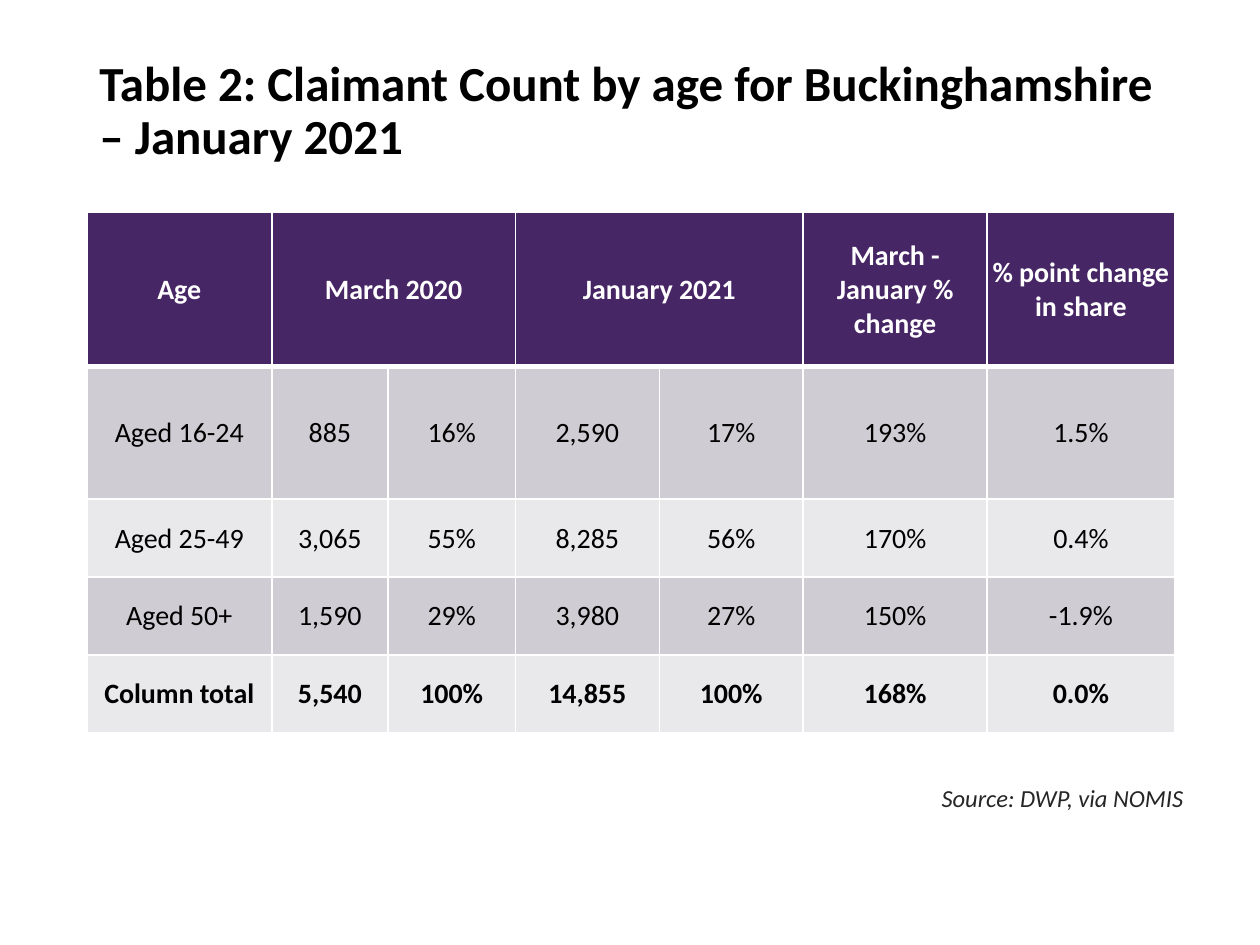
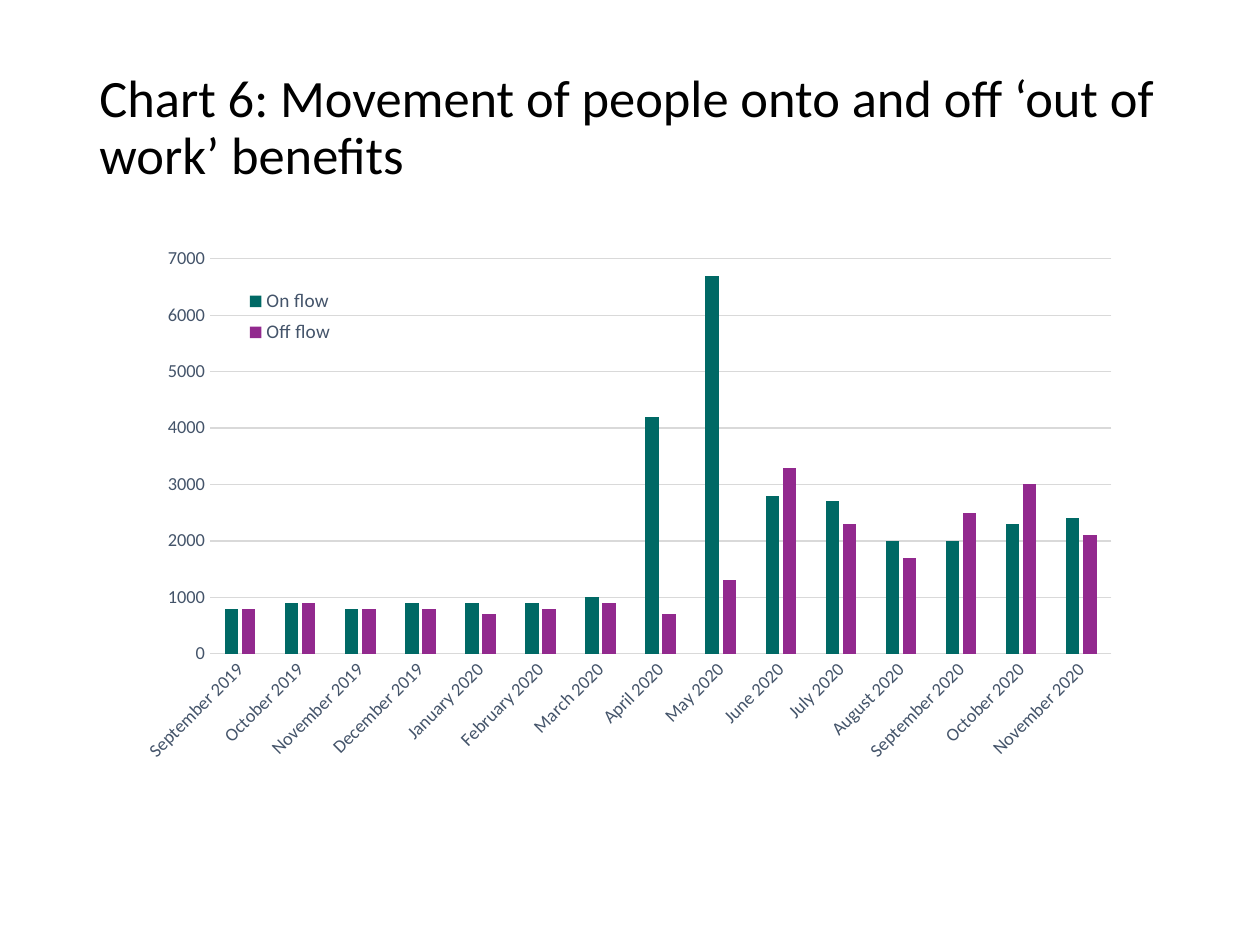
"""Build two slides on Buckinghamshire claimants: a table by age and a chart of benefit flows."""
import dataclasses

import lxml.etree
import pptx
import pptx.chart.data
import pptx.dml.color
import pptx.enum.chart
import pptx.enum.text
import pptx.oxml.ns
import pptx.util

Cm, Pt = pptx.util.Cm, pptx.util.Pt
colour = pptx.dml.color.RGBColor.from_string
qn = pptx.oxml.ns.qn
ALIGN, ANCHOR = pptx.enum.text.PP_ALIGN, pptx.enum.text.MSO_ANCHOR


@dataclasses.dataclass(frozen=True)
class Theme:
    font: str = "Calibri"
    text: str = "000000"
    white: str = "FFFFFF"
    header: str = "472665"
    bands: tuple = ("CFCDD3", "E9E8EA")
    source: str = "262626"
    axis_text: str = "44546A"
    grid: str = "D9D9D9"
    on_flow: str = "006965"
    off_flow: str = "92298E"
    table_size: float = 16
    source_size: float = 14
    axis_size: float = 10.5
    legend_size: float = 11


theme = Theme()


def style_font(font, size, color, bold=False):
    font.name, font.size, font.bold = theme.font, Pt(size), bold
    font.color.rgb = colour(color)


def set_layout(parent, position, **fractions):
    for old_layout in parent.findall(qn("c:layout")):
        parent.remove(old_layout)
    layout = lxml.etree.Element(qn("c:layout"))
    manual = lxml.etree.SubElement(layout, qn("c:manualLayout"))
    if parent.tag == qn("c:plotArea"):
        lxml.etree.SubElement(manual, qn("c:layoutTarget"), val="inner")
    for axis_name in "xy":
        lxml.etree.SubElement(manual, qn(f"c:{axis_name}Mode"), val="edge")
    for name, fraction in fractions.items():
        lxml.etree.SubElement(manual, qn(f"c:{name}"), val=str(fraction))
    parent.insert(position, layout)


deck = pptx.Presentation()
deck.slide_width, deck.slide_height = Cm(25.4), Cm(19.05)

titles = [
    ("Table 2: Claimant Count by age for Buckinghamshire – January 2021", 0.97, 28, True),
    ("Chart 6: Movement of people onto and off ‘out of work’ benefits", 1.3, 30, False),
]
pages = []
for wording, top, size, bold in titles:
    page = deck.slides.add_slide(deck.slide_layouts[5])
    title = page.shapes.title
    title.left, title.top, title.width, title.height = Cm(1.75), Cm(top), Cm(21.9), Cm(2.59)
    title.text_frame.text = wording
    title.text_frame.auto_size = pptx.enum.text.MSO_AUTO_SIZE.NONE
    title.text_frame.vertical_anchor = ANCHOR.MIDDLE
    para = title.text_frame.paragraphs[0]
    para.alignment, para.line_spacing = ALIGN.LEFT, 0.9
    style_font(para.font, size, theme.text, bold)
    pages.append(page)
table_page, chart_page = pages

claimants = [
    ["Age", "March 2020", "", "January 2021", "", "March - January % change", "% point change in share"],
    ["Aged 16-24", "885", "16%", "2,590", "17%", "193%", "1.5%"],
    ["Aged 25-49", "3,065", "55%", "8,285", "56%", "170%", "0.4%"],
    ["Aged 50+", "1,590", "29%", "3,980", "27%", "150%", "-1.9%"],
    ["Column total", "5,540", "100%", "14,855", "100%", "168%", "0.0%"],
]
column_widths = [3.73, 2.34, 2.57, 2.9, 2.9, 3.71, 3.78]
row_heights = [3.12, 2.67, 1.57, 1.57, 1.57]
table = table_page.shapes.add_table(
    len(row_heights), len(column_widths), Cm(1.75), Cm(4.27), Cm(sum(column_widths)), Cm(sum(row_heights))
).table
for column, width in zip(table.columns, column_widths):
    column.width = Cm(width)
for row, height in zip(table.rows, row_heights):
    row.height = Cm(height)
for first in (1, 3):
    table.cell(0, first).merge(table.cell(0, first + 1))

for row_index, row_values in enumerate(claimants):
    is_header = row_index == 0
    is_total = row_index == len(claimants) - 1
    border_widths = {"L": 1, "R": 1, "T": 3 if row_index == 1 else 1, "B": 3 if is_header else 1}
    for column_index, wording in enumerate(row_values):
        cell = table.cell(row_index, column_index)
        cell.vertical_anchor = ANCHOR.MIDDLE
        cell.margin_left = cell.margin_top = cell.margin_right = Cm(0.02)
        cell.margin_bottom = 0
        properties = cell._tc.get_or_add_tcPr()
        for side, width in border_widths.items():
            border = lxml.etree.SubElement(properties, qn(f"a:ln{side}"), w=str(Pt(width)))
            border_fill = lxml.etree.SubElement(border, qn("a:solidFill"))
            lxml.etree.SubElement(border_fill, qn("a:srgbClr"), val=theme.white)
        cell.fill.solid()
        cell.fill.fore_color.rgb = colour(theme.header if is_header else theme.bands[(row_index - 1) % 2])
        if wording:
            cell.text = wording
            para = cell.text_frame.paragraphs[0]
            para.alignment = ALIGN.CENTER
            style_font(para.font, theme.table_size, theme.white if is_header else theme.text, is_header or is_total)

source_box = table_page.shapes.add_textbox(Cm(18.06), Cm(15.67), Cm(6.05), Cm(0.86))
source_box.text_frame.word_wrap = True
source_box.text_frame.auto_size = pptx.enum.text.MSO_AUTO_SIZE.SHAPE_TO_FIT_TEXT
source_box.text_frame.text = "Source: DWP, via NOMIS"
para = source_box.text_frame.paragraphs[0]
para.alignment = ALIGN.RIGHT
style_font(para.font, theme.source_size, theme.source)
para.font.italic = True

flow_data = pptx.chart.data.CategoryChartData()
flow_data.categories = [
    "September 2019", "October 2019", "November 2019", "December 2019", "January 2020",
    "February 2020", "March 2020", "April 2020", "May 2020", "June 2020", "July 2020",
    "August 2020", "September 2020", "October 2020", "November 2020",
]
flow_data.add_series(
    "On flow", [800, 900, 800, 900, 900, 900, 1000, 4200, 6700, 2800, 2700, 2000, 2000, 2300, 2400]
)
flow_data.add_series(
    "Off flow", [800, 900, 800, 800, 700, 800, 900, 700, 1300, 3300, 2300, 1700, 2500, 3000, 2100]
)
chart = chart_page.shapes.add_chart(
    pptx.enum.chart.XL_CHART_TYPE.COLUMN_CLUSTERED, Cm(2.62), Cm(4.75), Cm(20.19), Cm(11.71), flow_data
).chart
chart.has_title = False
style_font(chart.font, 10, theme.text)

plot = chart.plots[0]
plot.vary_by_categories = False
plot.gap_width, plot.overlap = 219, -27
for series, color in zip(plot.series, (theme.on_flow, theme.off_flow)):
    series.format.fill.solid()
    series.format.fill.fore_color.rgb = colour(color)

month_axis, count_axis = chart.category_axis, chart.value_axis
for axis in (month_axis, count_axis):
    axis.major_tick_mark = axis.minor_tick_mark = pptx.enum.chart.XL_TICK_MARK.NONE
    style_font(axis.tick_labels.font, theme.axis_size, theme.axis_text)
month_axis._element.find(qn("c:txPr")).find(qn("a:bodyPr")).set("rot", "-2700000")
count_axis.minimum_scale, count_axis.maximum_scale, count_axis.major_unit = 0, 7000, 1000
count_axis.format.line.fill.background()
for line in (month_axis.format.line, count_axis.major_gridlines.format.line):
    line.width = Pt(0.75)
    line.color.rgb = colour(theme.grid)

chart.has_legend = True
legend = chart.legend
legend.position = pptx.enum.chart.XL_LEGEND_POSITION.BOTTOM
legend.include_in_layout = True
style_font(legend.font, theme.legend_size, theme.axis_text)
set_layout(legend._element, 1, x=0.11, y=0.08, w=0.1, h=0.12)
set_layout(chart._chartSpace.chart.plotArea, 0, x=0.08, y=0.04, w=0.9, h=0.68)

deck.save("out.pptx")
